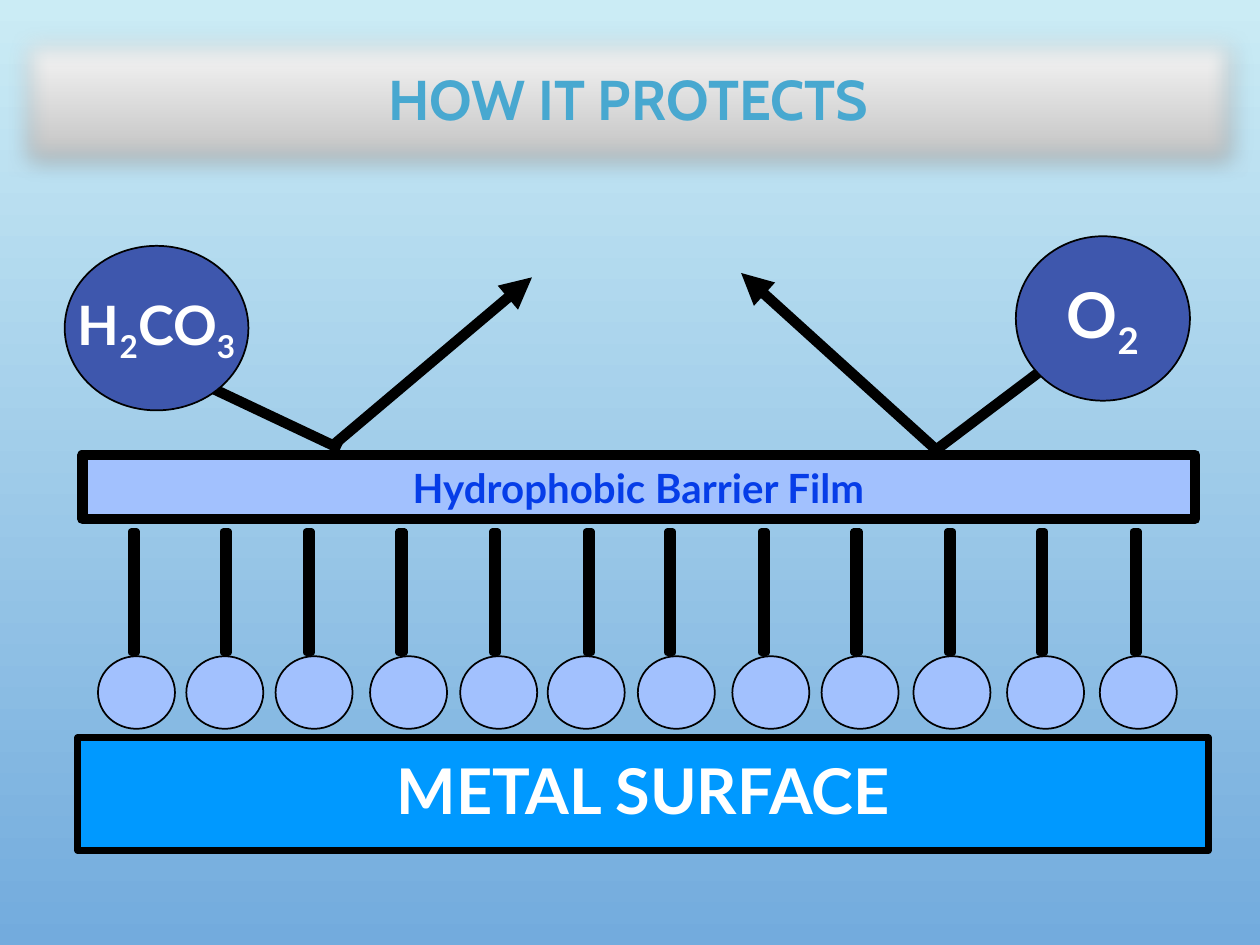
from dataclasses import dataclass
from lxml.etree import SubElement
from pptx import Presentation
from pptx.dml.color import RGBColor
from pptx.enum.shapes import MSO_CONNECTOR as Conn, MSO_SHAPE as Geom
from pptx.enum.text import MSO_ANCHOR as Anchor, MSO_AUTO_SIZE as Fit, PP_ALIGN as Align
from pptx.oxml.ns import qn
from pptx.util import Pt

BLACK = RGBColor(0x00, 0x00, 0x00)
WHITE = RGBColor(0xFF, 0xFF, 0xFF)
GREY = RGBColor(0xB9, 0xB9, 0xB9)
TEAL = RGBColor(0x48, 0xA8, 0xD0)
SKY = RGBColor(0xCB, 0xEC, 0xF5)
DUSK = RGBColor(0x73, 0xAB, 0xDD)
METAL = RGBColor(0x00, 0x99, 0xFF)
PALE = RGBColor(0xA2, 0xC1, 0xFE)
INK = RGBColor(0x06, 0x3D, 0xE8)
NAVY = RGBColor(0x3E, 0x57, 0xAD)


@dataclass
class Ray:
    start: tuple[float, float]
    end: tuple[float, float]
    arrow: bool = False


@dataclass
class Part:
    geom: Geom
    box: tuple[float, float, float, float]
    fill: RGBColor
    line: float
    text: str = ""
    size: float = 18
    color: RGBColor = WHITE
    spacing: float = 1.0


RAYS = [
    Ray((122.5, 222.5), (194.5, 256.5)),
    Ray((191.5, 253.5), (304, 158.5), True),
    Ray((594, 212.5), (535, 257)),
    Ray((535, 257), (423.5, 156), True),
]
PLATES = [
    Part(Geom.RECTANGLE, (44.5, 421.5, 646, 64.5), METAL, 4, "METAL SURFACE", 36, spacing=0.9),
    Part(Geom.RECTANGLE, (47, 260, 636, 36.5), PALE, 6, "Hydrophobic Barrier Film", 23, INK),
]
GASES = [
    Part(Geom.OVAL, (580.5, 135, 99.5, 94), NAVY, 1, "O2", 36),
    Part(Geom.OVAL, (37, 140.5, 105, 94), NAVY, 1, "H2CO3", 31),
]
# Left edges of the film molecules, spaced by hand
TAILS = [75, 127.5, 175, 228, 281.5, 335, 381.5, 435, 488, 541.5, 594, 647.5]
HEADS = [56, 106.5, 157.5, 211.5, 263, 313, 364.5, 418.5, 469.5, 522, 575.5, 628.5]


def shade(fill, top: RGBColor, base: RGBColor) -> None:
    fill.gradient()
    fill.gradient_angle = 270
    for stop, color in zip(fill.gradient_stops, (top, base)):
        stop.color.rgb = color


def style(run, face: str, size: float, color: RGBColor) -> None:
    font = run.font
    font.name, font.size, font.bold = face, Pt(size), True
    font.color.rgb = color


def draw_ray(slide, ray: Ray) -> None:
    points = [Pt(v) for v in ray.start + ray.end]
    line = slide.shapes.add_connector(Conn.STRAIGHT, *points)
    line.line.color.rgb = BLACK
    line.line.width = Pt(6)
    if ray.arrow:
        SubElement(line.line._get_or_add_ln(), qn("a:tailEnd"), type="triangle")
    SubElement(line._element.spPr, qn("a:effectLst"))


def draw_part(slide, part: Part) -> None:
    shape = slide.shapes.add_shape(part.geom, *[Pt(v) for v in part.box])
    shape.shadow.inherit = False
    shape.fill.solid()
    shape.fill.fore_color.rgb = part.fill
    shape.line.color.rgb = BLACK
    shape.line.width = Pt(part.line)
    if not part.text:
        return
    frame = shape.text_frame
    frame.word_wrap = False
    frame.vertical_anchor = Anchor.MIDDLE
    para = frame.paragraphs[0]
    para.alignment = Align.CENTER
    para.line_spacing = part.spacing
    # Digits in a formula become subscripts
    chunks = "".join(f"|{c}|" if c.isdigit() else c for c in part.text)
    for chunk in filter(None, chunks.split("|")):
        run = para.add_run()
        run.text = chunk
        style(run, "Lato", part.size, part.color)
        if chunk.isdigit():
            run.font._element.set("baseline", "-25000")


def draw_title(slide, text: str) -> None:
    title = slide.shapes.title
    title.left, title.top, title.width, title.height = Pt(5), Pt(15), Pt(708), Pt(86.5)
    shade(title.fill, WHITE, GREY)
    frame = title.text_frame
    frame.text = text
    frame.auto_size = Fit.NONE
    frame.vertical_anchor = Anchor.MIDDLE
    para = frame.paragraphs[0]
    para.alignment = Align.CENTER
    para.line_spacing = 0.9
    style(para.runs[0], "Cabin", 32, TEAL)
    # Soft edge and shadow
    effects = SubElement(title._element.spPr, qn("a:effectLst"))
    shadow = SubElement(effects, qn("a:outerShdw"), blurRad=str(Pt(6)),
                        dist=str(Pt(1)), dir=str(45 * 60000))
    color = SubElement(shadow, qn("a:srgbClr"), val=str(BLACK))
    SubElement(color, qn("a:alpha"), val="20000")
    SubElement(effects, qn("a:softEdge"), rad=str(Pt(12)))


def main() -> None:
    deck = Presentation()
    deck.slide_width, deck.slide_height = Pt(720), Pt(540)
    slide = deck.slides.add_slide(deck.slide_layouts[5])
    shade(slide.background.fill, SKY, DUSK)
    draw_title(slide, "HOW IT PROTECTS")

    # Rays bouncing off the film
    for ray in RAYS:
        draw_ray(slide, ray)

    # Film, molecules, metal and gases
    tails = [Part(Geom.RECTANGLE, (x, 304, 3, 69), PALE, 4) for x in TAILS]
    heads = [Part(Geom.OVAL, (x, 375, 44, 41.5), PALE, 1) for x in HEADS]
    for part in PLATES + tails + heads + GASES:
        draw_part(slide, part)
    deck.save("out.pptx")


if __name__ == "__main__":
    main()
